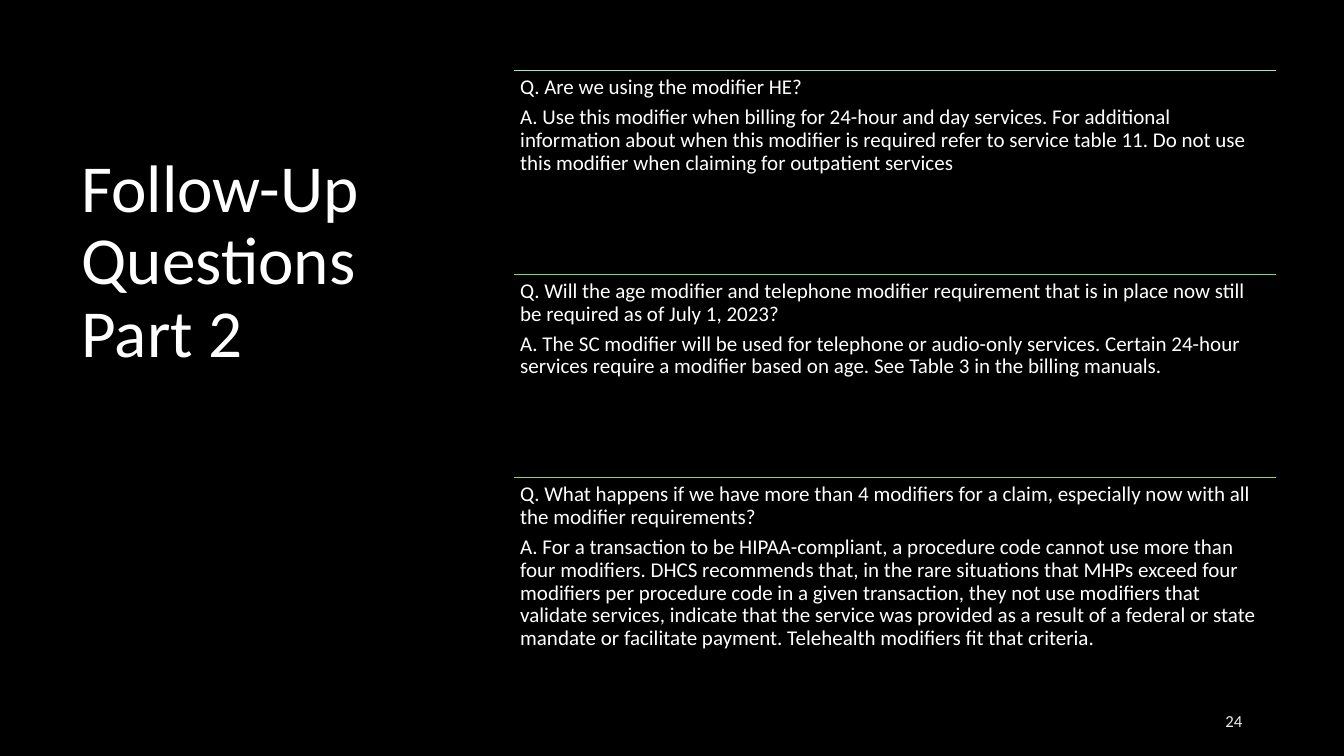
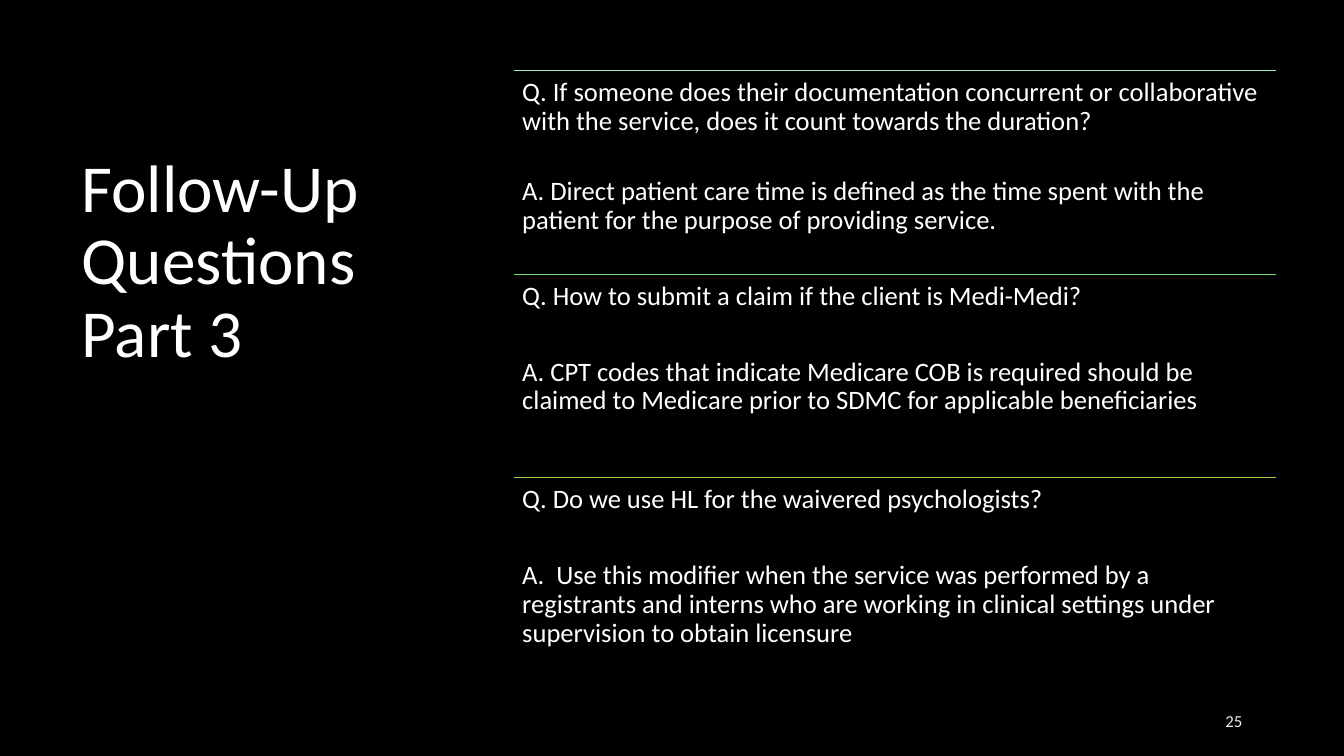
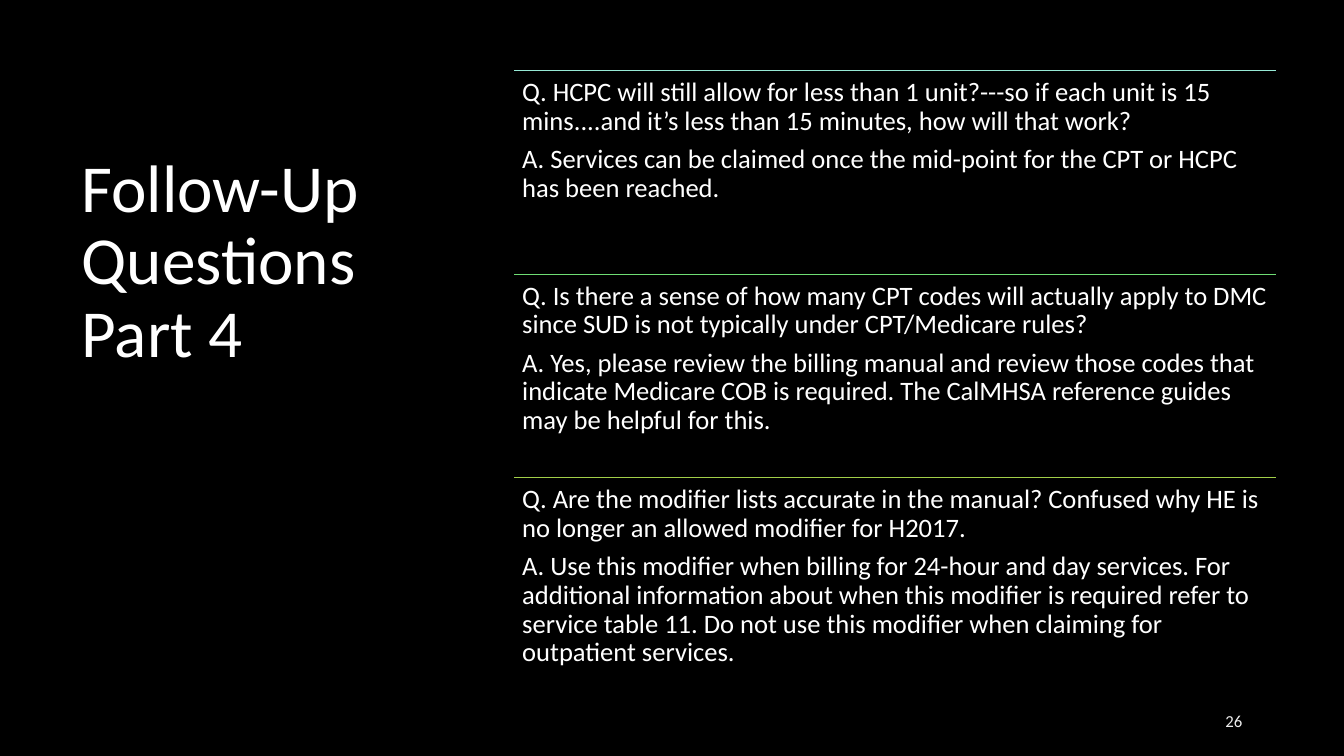
from lxml.etree import SubElement
from pptx import Presentation
from pptx.dml.color import RGBColor
from pptx.enum.shapes import MSO_CONNECTOR
from pptx.enum.text import MSO_ANCHOR, PP_ALIGN
from pptx.oxml.ns import qn
from pptx.util import Inches, Pt

BLACK = RGBColor(0x00, 0x00, 0x00)
WHITE = RGBColor(0xFF, 0xFF, 0xFF)
PALE = RGBColor(0xED, 0xED, 0xED)
MINT = RGBColor(0x97, 0xE9, 0xD5)
GREEN = RGBColor(0x6F, 0xDD, 0x74)
LIME = RGBColor(0xA2, 0xCF, 0x49)
RULES = (MINT, GREEN, LIME)

# Question column
LEFT, TOP, WIDTH, STEP = 5.1, 0.7, 7.56, 2.02


class Deck:
    font = "Calibri"

    def __init__(self):
        self.prs = Presentation()
        self.prs.slide_width = Inches(13.33)
        self.prs.slide_height = Inches(7.5)
        fill = self.prs.slide_master.background.fill
        fill.solid()
        fill.fore_color.rgb = BLACK
        self.slide = None

    def add(self, title):
        self.slide = self.prs.slides.add_slide(self.prs.slide_layouts[5])
        box = self.slide.shapes.title
        box.left, box.top = Inches(0.71), Inches(1.48)
        box.width, box.height = Inches(3.21), Inches(4.87)
        frame = box.text_frame
        frame.word_wrap = True
        frame.vertical_anchor = MSO_ANCHOR.TOP
        para = frame.paragraphs[0]
        para.alignment = PP_ALIGN.LEFT
        para.line_spacing = 0.9
        self.run(para, title, 48)

    def run(self, para, text, size, color=WHITE):
        run = para.add_run()
        run.text = text
        run.font.name = self.font
        run.font.size = Pt(size)
        run.font.color.rgb = color

    def box(self, left, top, width, height):
        shape = self.slide.shapes.add_textbox(
            Inches(left), Inches(top), Inches(width), Inches(height))
        shape.text_frame.word_wrap = True
        return shape.text_frame

    def rule(self, top, color):
        line = self.slide.shapes.add_connector(
            MSO_CONNECTOR.STRAIGHT, Inches(LEFT), Inches(top),
            Inches(LEFT + WIDTH), Inches(top))
        line.line.color.rgb = color
        line.line.width = Pt(0.5)
        SubElement(line.element.spPr, qn("a:effectLst"))

    def entry(self, top, texts, size, inset, gap):
        frame = self.box(LEFT, top, WIDTH, STEP)
        frame.margin_left = frame.margin_right = Inches(inset)
        frame.margin_top = frame.margin_bottom = Inches(inset)
        for i, text in enumerate(texts):
            para = frame.paragraphs[0] if i == 0 else frame.add_paragraph()
            para.line_spacing = 0.9
            if i:
                para.space_before = Pt(gap)
            self.run(para, text, size)

    def number(self, value):
        frame = self.box(9.42, 6.95, 3, 0.4)
        frame.vertical_anchor = MSO_ANCHOR.MIDDLE
        para = frame.paragraphs[0]
        para.alignment = PP_ALIGN.RIGHT
        self.run(para, str(value), 12, PALE)


# Each slide: text size, inset, gaps before the answers, questions and answers
PAGES = [
    (15, 0.06, (5.25, 5.25, 5.25), [
        ("Q. Are we using the modifier HE?",
         "A. Use this modifier when billing for 24-hour and day services. For "
         "additional information about when this modifier is required refer "
         "to service table 11. Do not use this modifier when claiming for "
         "outpatient services"),
        ("Q. Will the age modifier and telephone modifier requirement that is "
         "in place now still be required as of July 1, 2023?",
         "A. The SC modifier will be used for telephone or audio-only "
         "services. Certain 24-hour services require a modifier based on age. "
         "See Table 3 in the billing manuals."),
        ("Q. What happens if we have more than 4 modifiers for a claim, "
         "especially now with all the modifier requirements?",
         "A. For a transaction to be HIPAA-compliant, a procedure code cannot "
         "use more than four modifiers. DHCS recommends that, in the rare "
         "situations that MHPs exceed four modifiers per procedure code in a "
         "given transaction, they not use modifiers that validate services, "
         "indicate that the service was provided as a result of a federal or "
         "state mandate or facilitate payment. Telehealth modifiers fit that "
         "criteria."),
    ]),
    (19, 0.08, (29.5, 33.8, 33.8), [
        ("Q. If someone does their documentation concurrent or collaborative "
         "with the service, does it count towards the duration?",
         "A. Direct patient care time is defined as the time spent with the "
         "patient for the purpose of providing service."),
        ("Q. How to submit a claim if the client is Medi-Medi?",
         "A. CPT codes that indicate Medicare COB is required should be "
         "claimed to Medicare prior to SDMC for applicable beneficiaries"),
        ("Q. Do we use HL for the waivered psychologists?",
         "A.  Use this modifier when the service was performed by "
         "a registrants and interns who are working in clinical settings "
         "under supervision to obtain licensure"),
    ]),
    (19, 0.08, (6.65, 6.65, 6.65), [
        ("Q. HCPC will still allow for less than 1 unit?---so if each unit is "
         "15 mins....and it’s less than 15 minutes, how will that work?",
         "A. Services can be claimed once the mid-point for the CPT or HCPC "
         "has been reached."),
        ("Q. Is there a sense of how many CPT codes will actually apply to "
         "DMC since SUD is not typically under CPT/Medicare rules?",
         "A. Yes, please review the billing manual and review those codes "
         "that indicate Medicare COB is required. The CalMHSA reference "
         "guides may be helpful for this."),
        ("Q. Are the modifier lists accurate in the manual? Confused why HE "
         "is no longer an allowed modifier for H2017.",
         "A. Use this modifier when billing for 24-hour and day services. For "
         "additional information about when this modifier is required refer "
         "to service table 11. Do not use this modifier when claiming for "
         "outpatient services."),
    ]),
]


def main():
    deck = Deck()
    for part, (size, inset, gaps, pairs) in enumerate(PAGES, 2):
        deck.add(f"Follow-Up Questions Part {part}")
        for i, (color, gap, texts) in enumerate(zip(RULES, gaps, pairs)):
            top = TOP + i * STEP
            deck.rule(top, color)
            deck.entry(top, texts, size, inset, gap)
        deck.number(part + 22)
    deck.prs.save("out.pptx")


if __name__ == "__main__":
    main()
